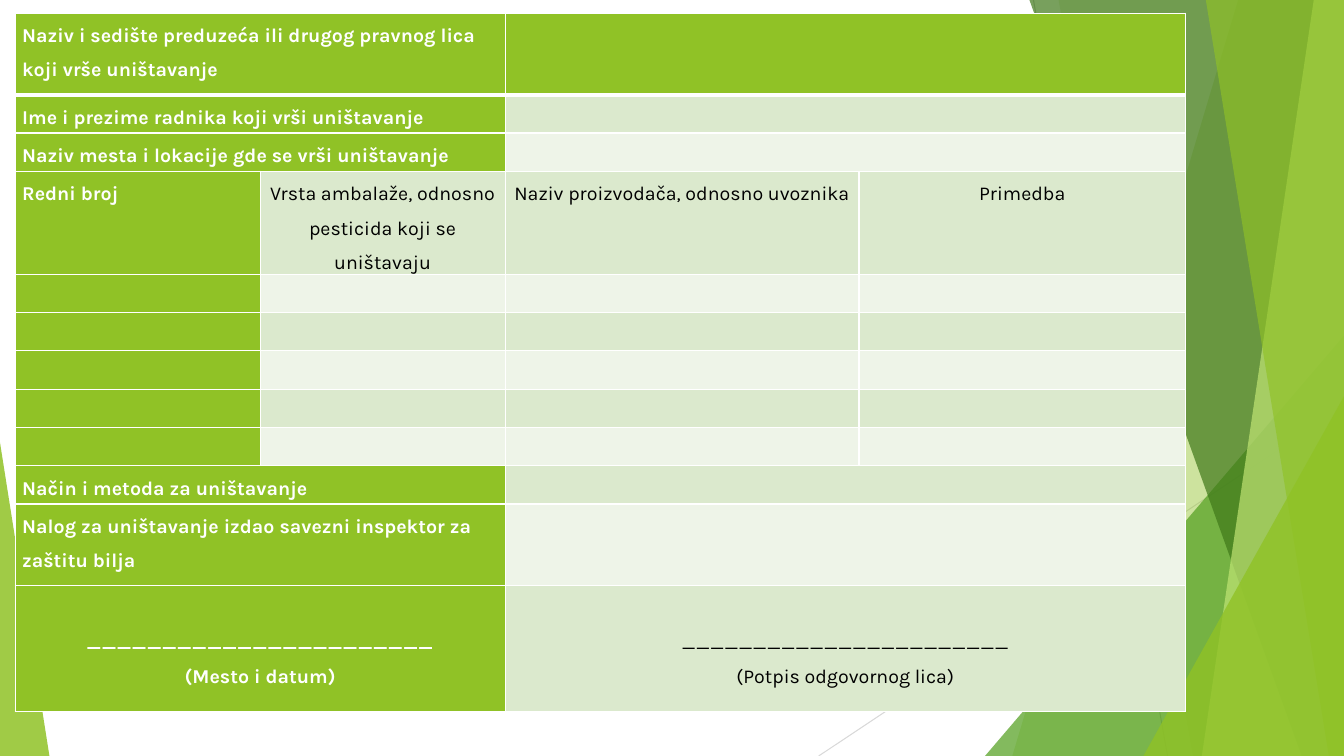
import lxml.etree
import pptx
import pptx.dml.color
import pptx.enum.shapes
import pptx.enum.text
import pptx.oxml.ns
import pptx.util

Inches = pptx.util.Inches
GREEN, DARK_BAND, LIGHT_BAND = "90C226", "DBE9CD", "EEF4E8"
COLUMN_WIDTHS = [2.43, 2.43, 3.51, 3.24]
ROW_HEIGHTS = [0.81, 0.38, 0.38, 0.81] + [0.38] * 6 + [0.81, 1.25]
HEADING_ROW, SIGNATURE_ROW = 3, 11
ENTRY_ROWS = range(HEADING_ROW, 9)
WIDE_LABELS = {
    0: "Naziv i sedište preduzeća ili drugog pravnog lica koji vrše uništavanje",
    1: "Ime i prezime radnika koji vrši uništavanje",
    2: "Naziv mesta i lokacije gde se vrši uništavanje",
    9: "Način i metoda za uništavanje",
    10: "Nalog za uništavanje izdao savezni inspektor za zaštitu bilja",
}
HEADINGS = [
    "Redni broj",
    "Vrsta ambalaže, odnosno pesticida koji se uništavaju",
    "Naziv proizvodača, odnosno uvoznika",
    "Primedba",
]
SIGNATURE_RULE = "_" * 23


def color(value):
    """Return the colour for a hex string."""
    return pptx.dml.color.RGBColor.from_string(value)


def paint(shape, fill, opacity):
    """Give a shape a translucent fill with no line or shadow."""
    shape.shadow.inherit = False
    shape.fill.solid()
    shape.fill.fore_color.rgb = color(fill)
    shape.line.fill.background()
    rgb = shape.fill._xPr.find(".//" + pptx.oxml.ns.qn("a:srgbClr"))
    lxml.etree.SubElement(rgb, pptx.oxml.ns.qn("a:alpha"), val=str(opacity * 1000))


def add_line(slide, start, end, line_color):
    """Draw a thin straight line between two points in inches."""
    connector = slide.shapes.add_connector(
        pptx.enum.shapes.MSO_CONNECTOR.STRAIGHT, *map(Inches, start + end))
    connector.line.color.rgb = color(line_color)
    connector.line.width = pptx.util.Pt(0.75)
    properties = connector._element.spPr
    lxml.etree.SubElement(properties, pptx.oxml.ns.qn("a:effectLst"))


def add_facet(slide, box, top_x, bottom_x, fill, opacity):
    """Fill the box to the right of a slanted edge."""
    left, top, width, height = box
    right, bottom = left + width, top + height
    builder = slide.shapes.build_freeform(
        Inches(left + top_x), Inches(top), scale=1.0)
    points = [(right, top), (right, bottom), (left + bottom_x, bottom)]
    builder.add_line_segments([(Inches(x), Inches(y)) for x, y in points])
    paint(builder.convert_to_shape(), fill, opacity)


def add_triangle(slide, box, apex, fill, opacity):
    """Place a triangle whose apex is a fraction of its width."""
    triangle = slide.shapes.add_shape(
        pptx.enum.shapes.MSO_SHAPE.ISOSCELES_TRIANGLE, *map(Inches, box))
    triangle.adjustments[0] = apex
    paint(triangle, fill, opacity)


def add_decoration(slide, box):
    """Layer the green facets along the sides of the box."""
    left, top, width, height = box
    right, bottom = left + width, top + height

    def facet(facet_width, top_x, bottom_x, fill, opacity):
        """Place a full-height facet against the right edge."""
        add_facet(slide, (right - facet_width, top, facet_width, height),
                  top_x, bottom_x, fill, opacity)

    def corner(corner_width, corner_height, fill, opacity):
        """Place a triangle in the lower right corner."""
        add_triangle(slide, (right - corner_width, bottom - corner_height,
                             corner_width, corner_height), 1, fill, opacity)

    add_line(slide, (right - 3.08, top), (right - 1.75, bottom), "BFBFBF")
    add_line(slide, (right, top + 4.03), (right - 5.21, bottom), "D9D9D9")
    facet(3.29, 2.24, 0, GREEN, 30)
    facet(2.83, 0, 1.33, GREEN, 20)
    corner(3.56, 4.17, "54A021", 72)
    facet(3.12, 0, 2.7, "3F7819", 70)
    facet(1.41, 1.11, 0, "C0E474", 70)
    facet(1.37, 0, 1.22, GREEN, 65)
    corner(1.99, 3.57, GREEN, 80)
    add_triangle(slide, (left, bottom - 3.11, 0.49, 3.11), 0, GREEN, 85)


def format_cell(cell, fill, top_width, bottom_width):
    """Set a cell's margins, white borders and fill."""
    cell.margin_left = cell.margin_right = Inches(0.07)
    cell.margin_top = cell.margin_bottom = 0
    properties = cell._tc.get_or_add_tcPr()
    widths = {"a:lnL": 1, "a:lnR": 1, "a:lnT": top_width, "a:lnB": bottom_width}
    for tag, points in widths.items():
        border = lxml.etree.SubElement(
            properties, pptx.oxml.ns.qn(tag), w=str(pptx.util.Pt(points)))
        solid = lxml.etree.SubElement(border, pptx.oxml.ns.qn("a:solidFill"))
        lxml.etree.SubElement(solid, pptx.oxml.ns.qn("a:srgbClr"), val="FFFFFF")
    cell.fill.solid()
    cell.fill.fore_color.rgb = color(fill)


def write_cell(cell, text, is_label, centered):
    """Write a cell's text as a bold white label or plain black."""
    paragraph = cell.text_frame.paragraphs[0]
    paragraph.text = text
    paragraph.line_spacing = 1.5
    alignment = pptx.enum.text.PP_ALIGN
    paragraph.alignment = alignment.CENTER if centered else alignment.LEFT
    for run in paragraph.runs:
        run.font.name = "Karla"
        run.font.size = pptx.util.Pt(14)
        run.font.bold = is_label
        run.font.color.rgb = color("FFFFFF" if is_label else "000000")


def add_form(slide, box):
    """Build the destruction record table in the box."""
    table = slide.shapes.add_table(
        len(ROW_HEIGHTS), len(COLUMN_WIDTHS), *map(Inches, box)).table
    table.horz_banding = table.first_row = False
    for column, width in zip(table.columns, COLUMN_WIDTHS):
        column.width = Inches(width)
    for row_index, height in enumerate(ROW_HEIGHTS):
        table.rows[row_index].height = Inches(height)
        is_entry = row_index in ENTRY_ROWS
        band = DARK_BAND if row_index % 2 else LIGHT_BAND
        for column_index in range(len(COLUMN_WIDTHS)):
            is_label = row_index == 0 or column_index < (1 if is_entry else 2)
            format_cell(table.cell(row_index, column_index),
                        GREEN if is_label else band,
                        3 if row_index == 1 else 1, 3 if row_index == 0 else 1)
        if not is_entry:
            for first in (0, 2):
                table.cell(row_index, first).merge(table.cell(row_index, first + 1))
    for row_index, label in WIDE_LABELS.items():
        write_cell(table.cell(row_index, 0), label, True, False)
    for column_index, heading in enumerate(HEADINGS):
        write_cell(table.cell(HEADING_ROW, column_index), heading,
                   column_index == 0, column_index > 0)
    for first, caption in ((0, "(Mesto i datum)"), (2, "(Potpis odgovornog lica)")):
        cell = table.cell(SIGNATURE_ROW, first)
        cell.margin_top = Inches(0.34)
        write_cell(cell, SIGNATURE_RULE + "\v" + caption, first == 0, True)


def main():
    """Create the slide and save the presentation."""
    presentation = pptx.Presentation()
    presentation.slide_width = Inches(13.33)
    presentation.slide_height = Inches(7.5)
    slide = presentation.slides.add_slide(presentation.slide_layouts[6])
    add_decoration(slide, (0, 0, 13.33, 7.5))
    add_form(slide, (0.15, 0.13, sum(COLUMN_WIDTHS), sum(ROW_HEIGHTS)))
    presentation.save("out.pptx")


if __name__ == "__main__":
    main()
